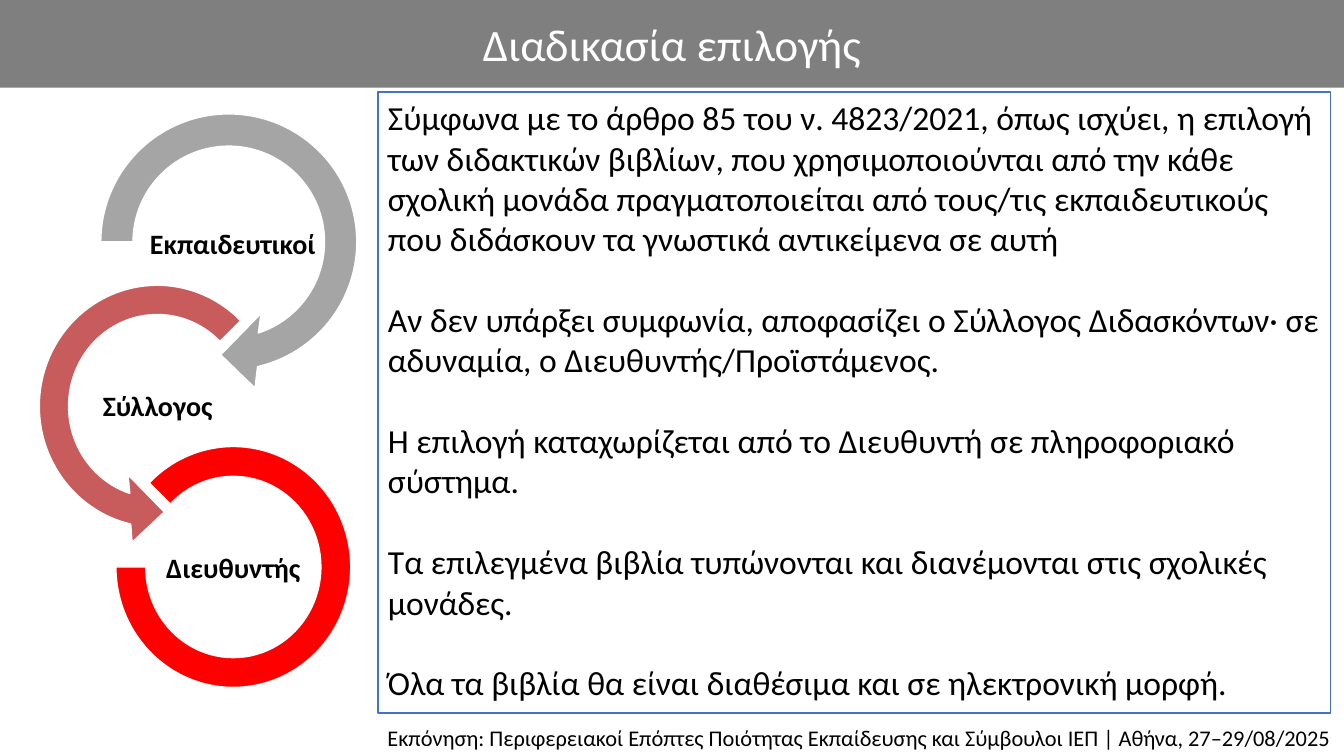
import math

from lxml import etree
from pptx import Presentation
from pptx import util as u
from pptx.dml.color import RGBColor
from pptx.enum import shapes, text
from pptx.oxml import ns

CELL = u.Inches(0.1)
COLUMNS, ROWS = 133.33, 75
COLOURS = {"bar": "7F7F7F", "white": "FFFFFF", "black": "000000", "grey": "A5A5A5",
           "rose": "C85B5B", "red": "FE0000", "frame": "4472C4"}
TITLE = "Διαδικασία επιλογής"
FOOTER = ("Εκπόνηση: Περιφερειακοί Επόπτες Ποιότητας Εκπαίδευσης και Σύμβουλοι ΙΕΠ"
          " | Αθήνα, 27–29/08/2025")
RULES = [
    "Σύμφωνα με το άρθρο 85 του ν. 4823/2021, όπως ισχύει, η επιλογή των διδακτικών "
    "βιβλίων, που χρησιμοποιούνται από την κάθε σχολική μονάδα πραγματοποιείται από "
    "τους/τις εκπαιδευτικούς που διδάσκουν τα γνωστικά αντικείμενα σε αυτή",
    "Αν δεν υπάρξει συμφωνία, αποφασίζει ο Σύλλογος Διδασκόντων· σε αδυναμία, "
    "ο Διευθυντής/Προϊστάμενος.",
    "Η επιλογή καταχωρίζεται από το Διευθυντή σε πληροφοριακό σύστημα.",
    "Τα επιλεγμένα βιβλία τυπώνονται και διανέμονται στις σχολικές μονάδες.",
    "Όλα τα βιβλία θα είναι διαθέσιμα και σε ηλεκτρονική μορφή.",
]


def cells(*lengths):
    """Convert grid cells to slide lengths."""
    return [round(length * CELL) for length in lengths]


def colour(name):
    """Look up a colour by name."""
    return RGBColor.from_string(COLOURS[name])


def paint(shape, fill=None, line=None):
    """Set a shape's fill and outline and drop its shadow."""
    shape.shadow.inherit = False
    if fill:
        shape.fill.solid()
        shape.fill.fore_color.rgb = colour(fill)
    else:
        shape.fill.background()
    if line:
        shape.line.color.rgb = colour(line)
        shape.line.width = u.Pt(1)
    else:
        shape.line.fill.background()


def write(shape, paragraphs, size, ink="black", bold=False, align="LEFT", anchor="TOP",
          spacing=1.0, gap=0, inset=(1, 0.5)):
    """Fill a shape with formatted paragraphs."""
    frame = shape.text_frame
    frame.word_wrap = True
    frame.auto_size = text.MSO_AUTO_SIZE.NONE
    frame.vertical_anchor = text.MSO_ANCHOR[anchor]
    frame.margin_left, frame.margin_top = cells(*inset)
    frame.margin_right, frame.margin_bottom = cells(*inset)
    for index, words in enumerate(paragraphs):
        para = frame.add_paragraph() if index else frame.paragraphs[0]
        para.alignment = text.PP_ALIGN[align]
        para.line_spacing = spacing
        para.space_before = u.Pt(gap if index else 0)
        span = para.add_run()
        span.text = words
        span.font.name = "Calibri"
        span.font.size = u.Pt(size)
        span.font.bold = bold
        span.font.color.rgb = colour(ink)


def add_title(page, box):
    """Place the title bar."""
    title = page.shapes.title
    title.left, title.top, title.width, title.height = cells(*box)
    paint(title, "bar")
    write(title, [TITLE], 32, ink="white", align="CENTER", anchor="MIDDLE")


def add_panel(page, box, paragraphs, size, line=None, **style):
    """Place a white rectangle of text."""
    panel = page.shapes.add_shape(shapes.MSO_SHAPE.RECTANGLE, *cells(*box))
    paint(panel, "white", line)
    write(panel, paragraphs, size, **style)


def add_outline(group, centre, size):
    """Add a rectangular freeform around a centre."""
    left, top = centre[0] - size[0] / 2, centre[1] - size[1] / 2
    right, bottom = left + size[0], top + size[1]
    builder = group.shapes.build_freeform(*cells(left, top))
    corners = [(right, top), (right, bottom), (left, bottom)]
    builder.add_line_segments([cells(*corner) for corner in corners], close=True)
    return builder.convert_to_shape()


def arc(radii, start, end, pieces=4):
    """Return the Bezier points of an elliptical arc between two angles in degrees."""
    step = math.radians((end - start) / pieces)
    pull = 4 / 3 * math.tan(step / 4)
    points = []
    for piece in range(pieces + 1):
        angle = math.radians(start) + piece * step
        for shift in (-pull, 0, pull):
            points.append((radii[0] * (math.cos(angle) - shift * math.sin(angle)),
                           radii[1] * (math.sin(angle) + shift * math.cos(angle))))
    return points[1:-1]


def add_curved_arrow(group, centre, size, outer, inner, start, ends, head, fill):
    """Draw a curved band that ends in an arrowhead."""
    arrow = add_outline(group, centre, size)
    outline = next(arrow.element.iter(ns.qn("a:path")))
    for child in list(outline):
        outline.remove(child)

    def draw(command, *points):
        """Append one command with points relative to the centre."""
        step = etree.SubElement(outline, ns.qn("a:" + command))
        for x, y in points:
            place = cells(x + size[0] / 2, y + size[1] / 2)
            etree.SubElement(step, ns.qn("a:pt"), x=str(place[0]), y=str(place[1]))

    outside, inside = arc(outer, start, ends[0]), arc(inner, ends[1], start)
    draw("moveTo", outside[0])
    for index in range(1, len(outside), 3):
        draw("cubicBezTo", *outside[index:index + 3])
    for point in head + inside[:1]:
        draw("lnTo", point)
    for index in range(1, len(inside), 3):
        draw("cubicBezTo", *inside[index:index + 3])
    draw("close")
    paint(arrow, fill, "white")


def add_label(group, centre, width, name):
    """Place the name of a stage."""
    label = add_outline(group, centre, (width, 7.7))
    paint(label)
    write(label, [name], 20, bold=True, align="CENTER", anchor="MIDDLE",
          spacing=0.9, inset=(0.1, 0.1))


def add_cycle(page, box):
    """Place the three linked stages of the decision."""
    left, top = box[:2]
    group = page.shapes.add_group_shape()
    teachers = (left + 20.7, top + 15)
    council = (left + 13.6, top + 31.3)
    director = (left + 21.15, top + 47.25)
    add_curved_arrow(group, teachers, (29.6, 29.8), (12.7, 12.7), (9.5, 9.5), 180, (437, 432),
                     [(2.6, 14.5), (-0.8, 11.2), (3.2, 7.1)], "grey")
    add_label(group, (teachers[0] + 0.4, teachers[1] + 0.35), 19.6, "Εκπαιδευτικοί")
    add_curved_arrow(group, council, (27.1, 27.8), (11.7, 12), (8.8, 9.1), 315, (103, 108),
                     [(-2.5, 13.5), (0.7, 10.5), (-2.9, 6.8)], "rose")
    add_label(group, (council[0] + 0.05, council[1] + 0.15), 15.1, "Σύλλογος")
    width, height = 23.3, 23.9
    ring = group.shapes.add_shape(
        shapes.MSO_SHAPE.BLOCK_ARC,
        *cells(director[0] - width / 2, director[1] - height / 2, width, height))
    for index, value in enumerate((135, 108, 0.127)):
        ring.adjustments[index] = value
    paint(ring, "red", "white")
    add_label(group, (director[0], director[1] + 0.2), 15.1, "Διευθυντής")


def main():
    """Build the slide and save it."""
    deck = Presentation()
    deck.slide_width, deck.slide_height = cells(COLUMNS, ROWS)
    page = deck.slides.add_slide(deck.slide_layouts[5])
    add_title(page, (0, 0, COLUMNS, 8.7))
    add_cycle(page, (2, 9, 34, 60))
    add_panel(page, (37.5, 9.15, 94.5, 61.6), RULES, 24, line="frame", gap=28.9)
    add_panel(page, (0.3, 71.1, 132.7, 3.9), [FOOTER], 16, align="RIGHT", spacing=1.1)
    deck.save("out.pptx")


if __name__ == "__main__":
    main()
